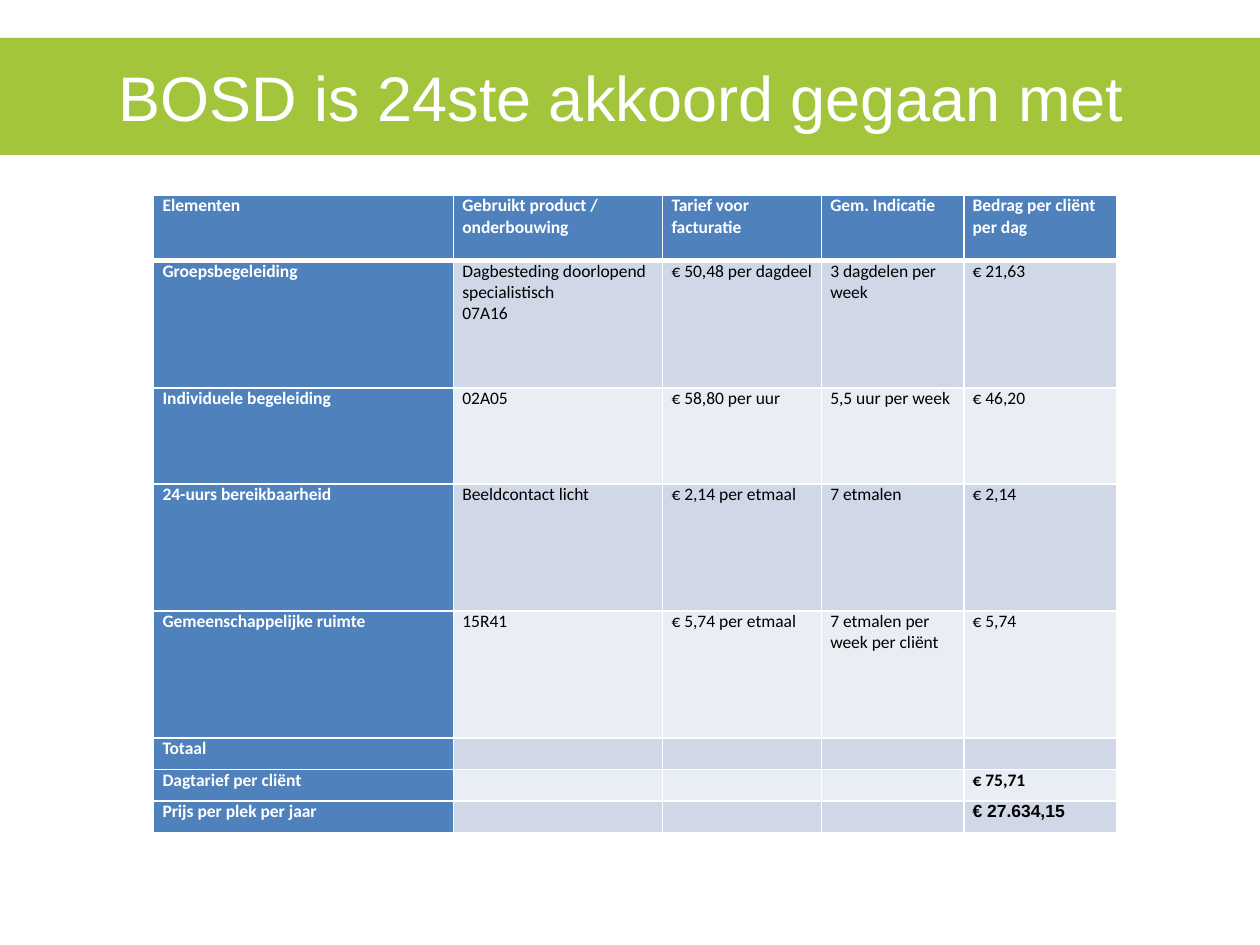
import lxml.etree
import pptx
import pptx.dml.color
import pptx.enum.shapes
import pptx.enum.text
import pptx.oxml.ns
import pptx.util
from dataclasses import dataclass

Inches = pptx.util.Inches
qn = pptx.oxml.ns.qn


@dataclass
class Theme:
    green: str = "A3C53C"
    blue: str = "4F81BD"
    dark: str = "D0D8E8"
    light: str = "E9EDF4"
    white: str = "FFFFFF"
    black: str = "000000"
    head: str = "Arial"
    body: str = "Calibri"
    big: int = 36
    small: int = 10
    thin: int = 1
    thick: int = 3


def color(code):
    return pptx.dml.color.RGBColor.from_string(code)


class Deck:
    def __init__(self, theme):
        self.theme = theme
        self.prs = pptx.Presentation()
        self.prs.slide_width = Inches(10)
        self.prs.slide_height = Inches(7.5)
        self.slide = self.prs.slides.add_slide(self.prs.slide_layouts[6])

    def label(self, para, text, size, font, ink, bold=False):
        run = para.add_run()
        run.text = text
        run.font.size = pptx.util.Pt(size)
        run.font.name = font
        run.font.bold = bold
        run.font.color.rgb = color(ink)

    def banner(self, text, top, height):
        theme = self.theme
        bar = self.slide.shapes.add_shape(
            pptx.enum.shapes.MSO_SHAPE.RECTANGLE,
            0, Inches(top), self.prs.slide_width, Inches(height))
        bar.shadow.inherit = False
        bar.fill.solid()
        bar.fill.fore_color.rgb = color(theme.green)
        bar.line.fill.background()
        frame = bar.text_frame
        frame.word_wrap = True
        frame.vertical_anchor = pptx.enum.text.MSO_ANCHOR.MIDDLE
        para = frame.paragraphs[0]
        para.alignment = pptx.enum.text.PP_ALIGN.CENTER
        self.label(para, text, theme.big, theme.head, theme.white)

    def border(self, cell, top, bottom):
        """Draw the four white edges; top and bottom are widths in points."""
        thin = self.theme.thin
        props = cell._tc.get_or_add_tcPr()
        for side, width in zip("LRTB", (thin, thin, top, bottom)):
            line = lxml.etree.SubElement(
                props, qn("a:ln" + side), w=str(pptx.util.Pt(width)))
            fill = lxml.etree.SubElement(line, qn("a:solidFill"))
            lxml.etree.SubElement(fill, qn("a:srgbClr"), val=self.theme.white)

    def cell(self, cell, text, fill, ink, bold, font):
        cell.margin_left = cell.margin_right = Inches(0.07)
        cell.margin_top = cell.margin_bottom = 0
        cell.fill.solid()
        cell.fill.fore_color.rgb = color(fill)
        frame = cell.text_frame
        size = self.theme.small
        for i, part in enumerate(text.split("\n")):
            para = frame.add_paragraph() if i else frame.paragraphs[0]
            if part:
                self.label(para, part, size, font, ink, bold)
            else:
                lxml.etree.SubElement(
                    para._p, qn("a:endParaRPr"), sz=str(size * 100))

    def table(self, left, top, widths, heights, rows):
        theme = self.theme
        grid = self.slide.shapes.add_table(
            len(rows), len(widths), Inches(left), Inches(top),
            Inches(sum(widths)), Inches(sum(heights))).table
        for col, width in zip(grid.columns, widths):
            col.width = Inches(width)
        for row, height in zip(grid.rows, heights):
            row.height = Inches(height)
        last = len(rows) - 1
        for r, row in enumerate(rows):
            for c, text in enumerate(row):
                cell = grid.cell(r, c)
                label = r == 0 or c == 0
                band = theme.dark if r % 2 else theme.light
                self.border(cell, theme.thick if r == 1 else theme.thin,
                            theme.thick if r == 0 else theme.thin)
                self.cell(cell, text,
                          theme.blue if label else band,
                          theme.white if label else theme.black,
                          label or r >= last - 1,
                          theme.head if r == last and c else theme.body)

    def save(self):
        self.prs.save("out.pptx")


ROWS = [
    ["Elementen", "Gebruikt product / onderbouwing",
     "Tarief voor facturatie", "Gem. Indicatie", "Bedrag per cliënt per dag"],
    ["Groepsbegeleiding", "Dagbesteding doorlopend specialistisch\n07A16",
     "€ 50,48 per dagdeel", "3 dagdelen per week", "€ 21,63"],
    ["Individuele begeleiding", "02A05",
     "€ 58,80 per uur", "5,5 uur per week", "€ 46,20"],
    ["24-uurs bereikbaarheid", "Beeldcontact licht",
     "€ 2,14 per etmaal", "7 etmalen", "€ 2,14"],
    ["Gemeenschappelijke ruimte", "15R41",
     "€ 5,74 per etmaal", "7 etmalen per week per cliënt", "€ 5,74"],
    ["Totaal", "", "", "", ""],
    ["Dagtarief per cliënt", "", "", "", "€ 75,71"],
    ["Prijs per plek per jaar", "", "", "", "€ 27.634,15"],
]


def main():
    deck = Deck(Theme())
    deck.banner("BOSD is 24ste akkoord gegaan met ", 0.3, 0.93)
    deck.table(1.22, 1.55, [2.38, 1.66, 1.26, 1.13, 1.21],
               [0.52, 1.01, 0.76, 1.01, 1.01] + [0.25] * 3, ROWS)
    deck.save()


if __name__ == "__main__":
    main()
